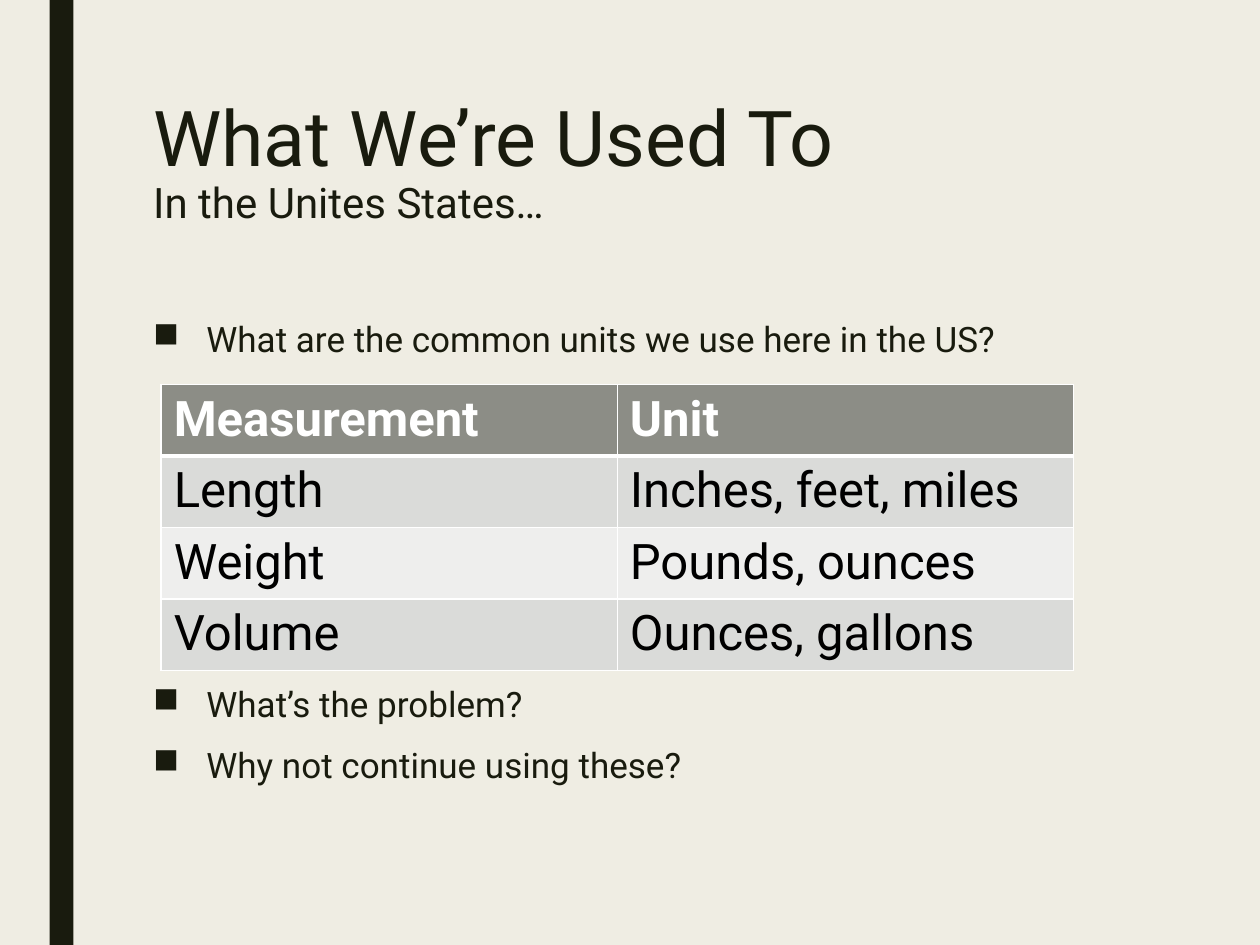
from dataclasses import dataclass

from lxml import etree
from pptx import Presentation
from pptx.dml.color import RGBColor
from pptx.enum import shapes, text
from pptx.oxml.ns import qn
from pptx.util import Cm, Pt


@dataclass(frozen=True)
class Theme:
    font: str = "Roboto"
    background: str = "EFEDE3"
    ink: str = "191B0E"
    header_fill: str = "8C8D86"
    band_fills: tuple[str, str] = ("DADBD9", "EEEEED")
    header_text: str = "FFFFFF"
    cell_text: str = "000000"
    border: str = "FFFFFF"
    title_size: int = 44
    subtitle_size: int = 24
    body_size: int = 20
    table_size: int = 28


@dataclass(frozen=True)
class Box:
    left: float
    top: float
    width: float
    height: float

    def emu(self) -> tuple[Cm, Cm, Cm, Cm]:
        return Cm(self.left), Cm(self.top), Cm(self.width), Cm(self.height)


@dataclass(frozen=True)
class Bullet:
    text: str
    space_before: float = 10


THEME = Theme()
SIDE_BAR = Box(1, 0, 0.48, 19.05)
TITLE = Box(2.84, 1.91, 20.02, 4.11)
BODY = Box(2.84, 6.35, 20.02, 10.13)
TABLE = Box(3.25, 7.75, 18.39, 5.64)
INDENT = Cm(1.07)

BULLETS = [
    Bullet("What are the common units we use here in the US?"),
    Bullet("What’s the problem?", space_before=184),  # leaves room for the table
    Bullet("Why not continue using these?"),
]
UNITS = [
    ("Measurement", "Unit"),
    ("Length", "Inches, feet, miles"),
    ("Weight", "Pounds, ounces"),
    ("Volume", "Ounces, gallons"),
]


def format_run(r, size: float, color: str, bold: bool = False) -> None:
    r.font.name = THEME.font
    r.font.size = Pt(size)
    r.font.bold = bold
    r.font.color.rgb = RGBColor.from_string(color)


def add_text_frame(slide, box: Box):
    tf = slide.shapes.add_textbox(*box.emu()).text_frame
    tf.word_wrap = True
    tf.vertical_anchor = text.MSO_ANCHOR.TOP
    return tf


def add_side_bar(slide) -> None:
    sp = slide.shapes.add_shape(shapes.MSO_SHAPE.RECTANGLE, *SIDE_BAR.emu())
    sp.shadow.inherit = False
    sp.fill.solid()
    sp.fill.fore_color.rgb = RGBColor.from_string(THEME.ink)
    sp.line.fill.background()


def add_title(slide, title: str, subtitle: str) -> None:
    tf = add_text_frame(slide, TITLE)
    tf.text = f"{title}\v{subtitle}"
    p = tf.paragraphs[0]
    p.line_spacing = 0.89
    for r, size in zip(p.runs, (THEME.title_size, THEME.subtitle_size)):
        format_run(r, size, THEME.ink)


def add_bullets(slide, bullets: list[Bullet]) -> None:
    tf = add_text_frame(slide, BODY)
    for i, bullet in enumerate(bullets):
        p = tf.add_paragraph() if i else tf.paragraphs[0]
        p.text = bullet.text
        p.line_spacing = 0.94
        p.space_before = Pt(bullet.space_before)
        p.space_after = Pt(2)
        format_run(p.runs[0], THEME.body_size, THEME.ink)
        pPr = p._p.get_or_add_pPr()
        pPr.set("marL", str(INDENT))
        pPr.set("indent", str(-INDENT))
        etree.SubElement(pPr, qn("a:buChar"), char="■")


def set_borders(cell, top: float = 1, bottom: float = 1) -> None:
    """Draw the cell's borders; call before the fill, which must follow them."""
    tcPr = cell._tc.get_or_add_tcPr()
    for side, width in (("L", 1), ("R", 1), ("T", top), ("B", bottom)):
        ln = etree.SubElement(tcPr, qn(f"a:ln{side}"), w=str(Pt(width)))
        fill = etree.SubElement(ln, qn("a:solidFill"))
        etree.SubElement(fill, qn("a:srgbClr"), val=THEME.border)


def add_unit_table(slide, rows: list[tuple[str, str]]) -> None:
    table = slide.shapes.add_table(len(rows), len(rows[0]), *TABLE.emu()).table
    for i, row in enumerate(rows):
        header = i == 0
        fill = THEME.header_fill if header else THEME.band_fills[(i - 1) % 2]
        color = THEME.header_text if header else THEME.cell_text
        for j, value in enumerate(row):
            cell = table.cell(i, j)
            cell.text = value
            format_run(cell.text_frame.paragraphs[0].runs[0],
                       THEME.table_size, color, bold=header)
            set_borders(cell, top=3 if i == 1 else 1, bottom=3 if header else 1)
            cell.fill.solid()
            cell.fill.fore_color.rgb = RGBColor.from_string(fill)


def main() -> None:
    prs = Presentation()
    prs.slide_width, prs.slide_height = Cm(25.4), Cm(19.05)
    slide = prs.slides.add_slide(prs.slide_layouts[6])
    slide.background.fill.solid()
    slide.background.fill.fore_color.rgb = RGBColor.from_string(THEME.background)
    add_side_bar(slide)
    add_title(slide, "What We’re Used To", "In the Unites States…")
    add_bullets(slide, BULLETS)
    add_unit_table(slide, UNITS)
    prs.save("out.pptx")


if __name__ == "__main__":
    main()
